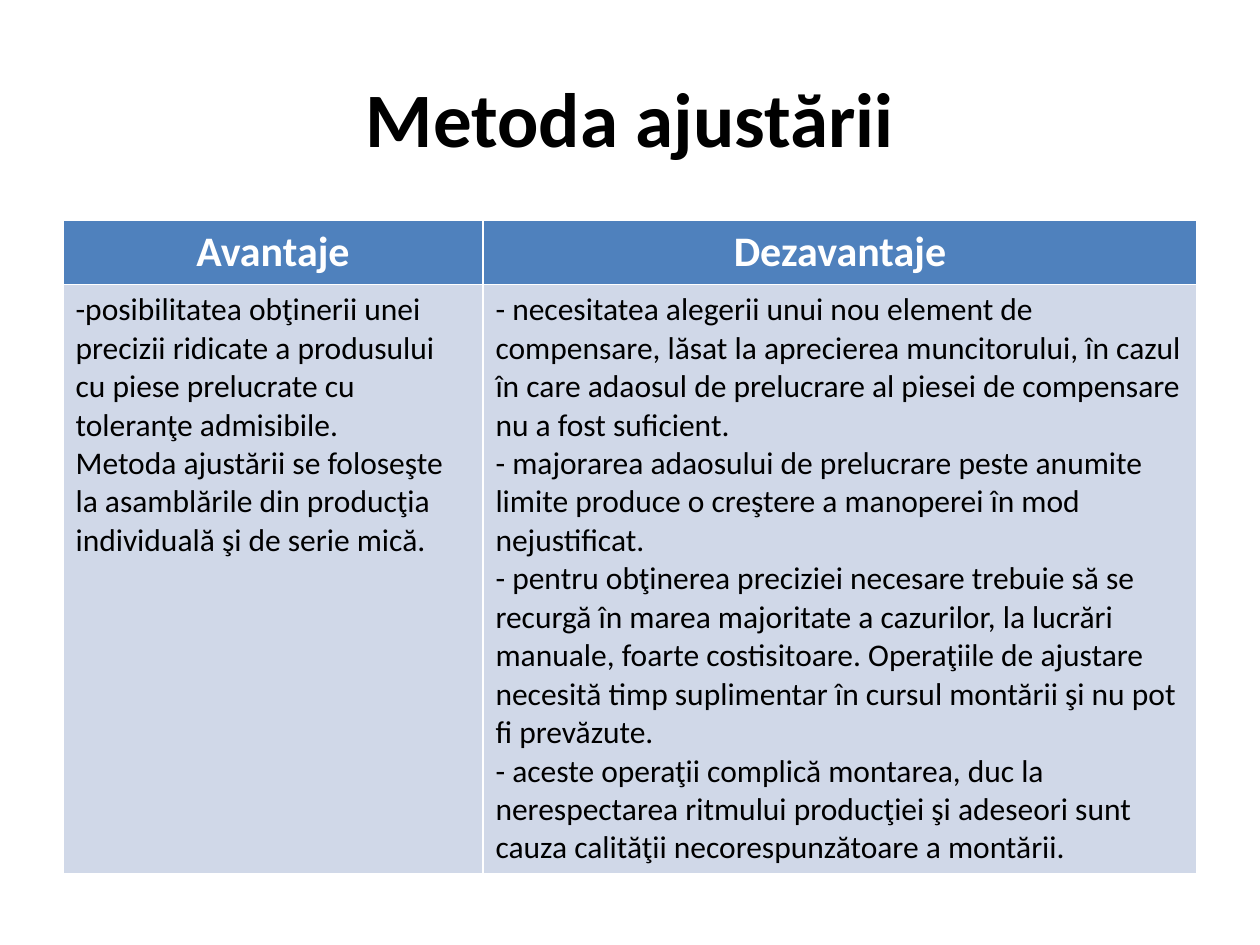
"""Build a slide comparing the pros and cons of the fitting method."""
from pptx import Presentation
from pptx.dml.color import RGBColor
from pptx.enum.text import MSO_ANCHOR, PP_ALIGN
from pptx.util import Pt

CENTER, LEFT = PP_ALIGN.CENTER, PP_ALIGN.LEFT
MIDDLE = MSO_ANCHOR.MIDDLE
FONT = "Calibri"
COLORS = {"head": "4F81BD", "body": "D0D8E8", "white": "FFFFFF", "black": "000000"}


def style(par, size, color, bold, align):
    par.alignment = align
    font = par.font
    font.name, font.size, font.bold = FONT, Pt(size), bold
    font.color.rgb = RGBColor.from_string(COLORS[color])


columns = [
    ("Avantaje", 240, [
        "-posibilitatea obţinerii unei precizii ridicate a produsului cu piese "
        "prelucrate cu toleranţe admisibile.",
        "Metoda ajustării se foloseşte la asamblările din producţia individuală "
        "şi de serie mică.",
    ]),
    ("Dezavantaje", 408, [
        "- necesitatea alegerii unui nou element de compensare, lăsat la "
        "aprecierea muncitorului, în cazul în care adaosul de prelucrare al "
        "piesei de compensare nu a fost suficient.",
        "- majorarea adaosului de prelucrare peste anumite limite produce o "
        "creştere a manoperei în mod nejustificat.",
        "- pentru obţinerea preciziei necesare trebuie să se recurgă în marea "
        "majoritate a cazurilor, la lucrări manuale, foarte costisitoare. "
        "Operaţiile de ajustare necesită timp suplimentar în cursul montării "
        "şi nu pot fi prevăzute.",
        "- aceste operaţii complică montarea, duc la nerespectarea ritmului "
        "producţiei şi adeseori sunt cauza calităţii necorespunzătoare a montării.",
    ]),
]

prs = Presentation()
prs.slide_width, prs.slide_height = Pt(720), Pt(540)
slide = prs.slides.add_slide(prs.slide_layouts[5])

title = slide.shapes.title
title.left, title.top, title.width, title.height = Pt(36), Pt(21.6), Pt(648), Pt(90)
title.text_frame.text = "Metoda ajustării"
title.text_frame.vertical_anchor = MIDDLE
style(title.text_frame.paragraphs[0], 44, "black", True, CENTER)

table = slide.shapes.add_table(2, 2, Pt(36), Pt(126), Pt(648), Pt(367.2)).table
table.rows[0].height, table.rows[1].height = Pt(36.5), Pt(330.7)

for col, (head, width, points) in enumerate(columns):
    table.columns[col].width = Pt(width)
    rows = [
        ([head], "head", 24, "white", True, CENTER),
        (points, "body", 18, "black", False, LEFT),
    ]
    for row, (lines, fill, *look) in enumerate(rows):
        cell = table.cell(row, col)
        cell.fill.solid()
        cell.fill.fore_color.rgb = RGBColor.from_string(COLORS[fill])
        cell.text = "\n".join(lines)
        for par in cell.text_frame.paragraphs:
            style(par, *look)

prs.save("out.pptx")
